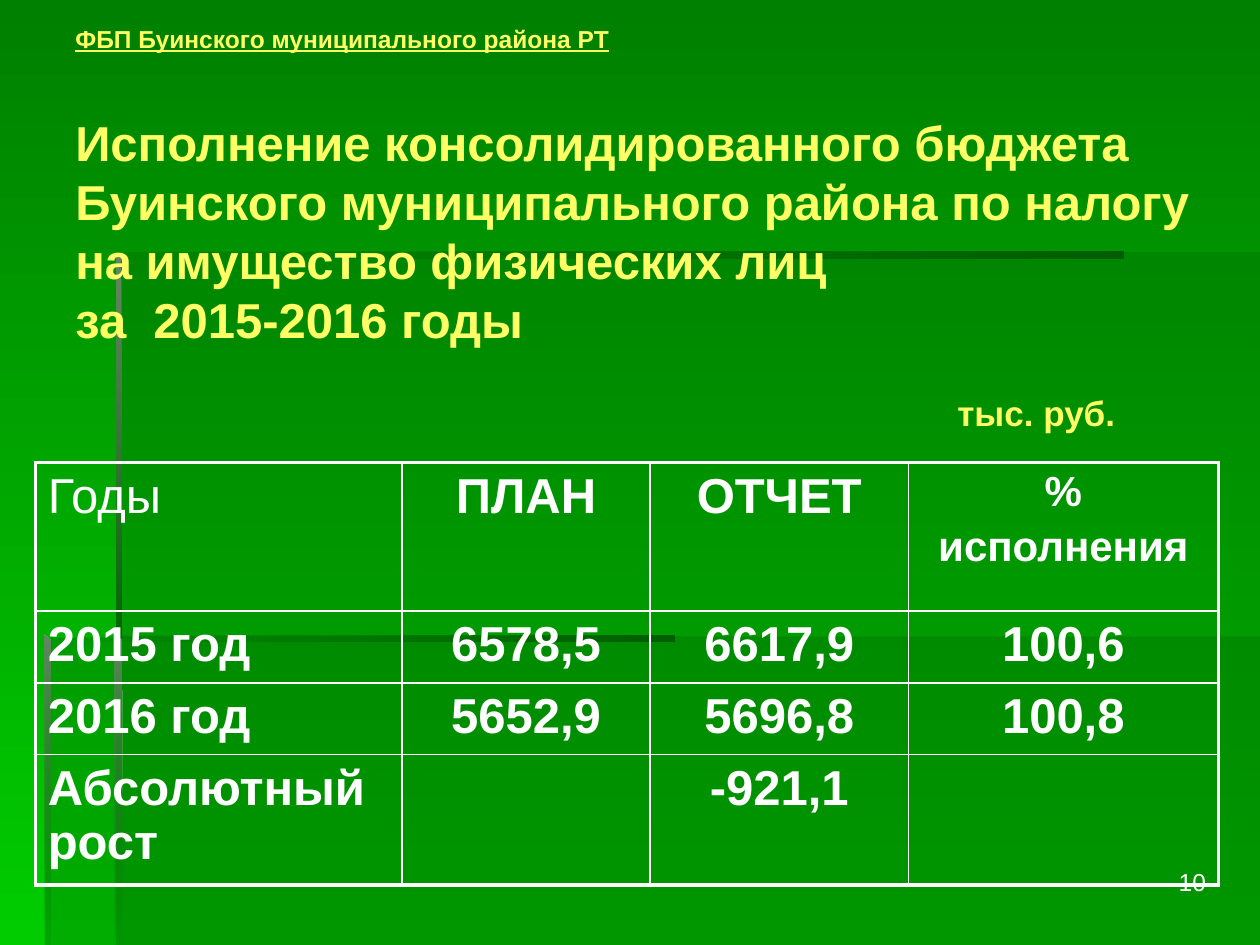
from dataclasses import dataclass, field
from typing import Any

from lxml import etree
from pptx import Presentation
from pptx import util as u
from pptx.dml.color import RGBColor
from pptx.enum import text as t
from pptx.oxml import ns

HUES = {"white": "FFFFFF", "lemon": "FFFF66", "dark": "006600", "deep": "005E00",
        "haze": "668666", "top": "008000", "low": "00CC00"}
DOWN, ACROSS = 270, 0
MID, RIGHT = t.PP_ALIGN.CENTER, t.PP_ALIGN.RIGHT


@dataclass
class Stop:
    hue: str
    alpha: int = 100


@dataclass
class Panel:
    """One stop makes a plain fill, two make a gradient."""
    points: list[tuple[float, float]]
    stops: list[Stop]
    angle: int = DOWN


@dataclass
class Line:
    text: str
    font: dict[str, Any]
    form: dict[str, Any] = field(default_factory=dict)
    indent: float = 0


def rgb(hue: str) -> RGBColor:
    return RGBColor.from_string(HUES[hue])


def apply(item: Any, values: dict[str, Any]) -> None:
    for name, value in values.items():
        setattr(item, name, value)


def blend(fill: Any, stops: list[Stop], angle: int) -> None:
    fill.gradient()
    fill.gradient_angle = angle
    for mark, stop in zip(fill.gradient_stops, stops):
        mark.color.rgb = rgb(stop.hue)


def draw_panel(slide: Any, panel: Panel) -> None:
    first, *rest = [(u.Inches(x), u.Inches(y)) for x, y in panel.points]
    pen = slide.shapes.build_freeform(*first)
    pen.add_line_segments(rest, close=True)
    shape = pen.convert_to_shape()
    shape.shadow.inherit = False
    shape.line.fill.background()
    if len(panel.stops) == 1:
        shape.fill.solid()
        shape.fill.fore_color.rgb = rgb(panel.stops[0].hue)
    else:
        blend(shape.fill, panel.stops, panel.angle)
    marks = shape._element.spPr.iter(ns.qn("a:srgbClr"))
    for mark, stop in zip(marks, panel.stops):
        if stop.alpha < 100:
            etree.SubElement(mark, ns.qn("a:alpha")).set("val", str(stop.alpha * 1000))


def write(frame: Any, lines: list[Line], hue: str) -> None:
    for i, line in enumerate(lines):
        para = frame.add_paragraph() if i else frame.paragraphs[0]
        para.text = line.text
        apply(para, line.form)
        if line.indent:
            para._p.get_or_add_pPr().set("marL", str(u.Inches(line.indent)))
        for run in para.runs:
            apply(run.font, {"name": "Arial", **line.font})
            run.font.color.rgb = rgb(hue)


def add_text(slide: Any, box: tuple[float, ...], lines: list[Line], hue: str,
             anchor: Any = t.MSO_ANCHOR.TOP) -> None:
    frame = slide.shapes.add_textbox(*map(u.Inches, box)).text_frame
    apply(frame, {"word_wrap": True, "vertical_anchor": anchor})
    write(frame, lines, hue)


def edge(cell: Any, sides: dict[str, float]) -> None:
    """Sets cell borders; sides maps L, R, T, B, in that order, to points."""
    props = cell._tc.get_or_add_tcPr()
    for i, (side, width) in enumerate(sides.items()):
        line = etree.Element(ns.qn(f"a:ln{side}"), w=str(u.Pt(width)))
        fill = etree.SubElement(line, ns.qn("a:solidFill"))
        etree.SubElement(fill, ns.qn("a:srgbClr"), val=HUES["white"])
        props.insert(i, line)


def add_grid(slide: Any, rows: list[list[str]], wide: list[float], high: list[float]) -> None:
    box = map(u.Inches, (0.28, 3.67, sum(wide), sum(high)))
    grid = slide.shapes.add_table(len(rows), len(wide), *box).table
    apply(grid, {"first_row": False, "horz_banding": False})
    for col, size in zip(grid.columns, wide):
        col.width = u.Inches(size)
    for row, size in zip(grid.rows, high):
        row.height = u.Inches(size)
    last, end = len(rows) - 1, len(wide) - 1
    for r, row in enumerate(rows):
        for c, words in enumerate(row):
            cell = grid.cell(r, c)
            cell.fill.background()
            outer = {"L": c == 0, "R": c == end, "T": r == 0, "B": r == last}
            edge(cell, {side: 2.25 if out else 1 for side, out in outer.items()})
            font = {"size": u.Pt(24 if (r, c) == (0, end) else 28), "bold": r + c > 0}
            lines = [Line(part, font, {"alignment": MID if c else t.PP_ALIGN.LEFT,
                                       "space_before": u.Pt(4.8 if i else 0)})
                     for i, part in enumerate(words.split("\n"))]
            write(cell.text_frame, lines, "white")


VEIL = [Stop("dark", 30)]
FADE = [Stop("dark", 0), Stop("deep")]
PANELS = [
    Panel([(0.92, 5.05), (0.92, 7.5), (10, 7.5), (10, 5.05)], VEIL),
    Panel([(0.94, 5.06), (0.36, 5.06), (0.36, 7.5), (10, 7.5), (10, 2), (0.94, 2)], VEIL),
    Panel([(0.92, 2), (0.92, 2.05), (8.92, 2.05), (8.92, 2)], FADE, ACROSS),
    Panel([(0.92, 2), (0.92, 5.1), (0.97, 5.1), (0.96, 2.04)],
          [Stop("haze"), Stop("dark")]),
    Panel([(0.91, 7.5), (0.97, 7.5), (0.96, 5.08), (0.91, 5.04)],
          [Stop("haze"), Stop("dark", 0)]),
    Panel([(0.35, 5.04), (0.35, 5.09), (5.35, 5.09), (5.35, 5.04)], FADE, ACROSS),
    Panel([(0.35, 5.04), (0.35, 7.5), (0.4, 7.5), (0.4, 5.09)],
          [Stop("haze"), Stop("dark", 10)]),
]
TITLE = [
    Line("ФБП Буинского муниципального района РТ",
         {"size": u.Pt(14), "bold": True, "underline": True}),
    Line("Исполнение консолидированного бюджета Буинского муниципального района "
         "по налогу на имущество физических лиц\vза  2015-2016 годы",
         {"size": u.Pt(28), "bold": True}, {"space_before": u.Pt(34)}),
    Line("тыс. руб.", {"size": u.Pt(20), "bold": True}, {"space_before": u.Pt(25)}, 7),
]
ROWS = [
    ["Годы", "ПЛАН", "ОТЧЕТ", "%\nисполнения"],
    ["2015 год", "6578,5", "6617,9", "100,6"],
    ["2016 год", "5652,9", "5696,8", "100,8"],
    ["Абсолютный рост", "", "-921,1", ""],
]


def main() -> None:
    deck = Presentation()
    apply(deck, {"slide_width": u.Inches(10), "slide_height": u.Inches(7.5)})
    slide = deck.slides.add_slide(deck.slide_layouts[6])
    blend(slide.background.fill, [Stop("top"), Stop("low")], DOWN)
    for panel in PANELS:
        draw_panel(slide, panel)
    add_text(slide, (0.5, 0.27, 9.17, 3.09), TITLE, "lemon", t.MSO_ANCHOR.MIDDLE)
    add_grid(slide, ROWS, [2.91, 1.97, 2.05, 2.46], [1.18, 0.57, 0.57, 0.65])
    page = Line("10", {"size": u.Pt(14)}, {"alignment": RIGHT})
    add_text(slide, (7.59, 6.83, 2.08, 0.52), [page], "white")
    deck.save("out.pptx")


if __name__ == "__main__":
    main()
